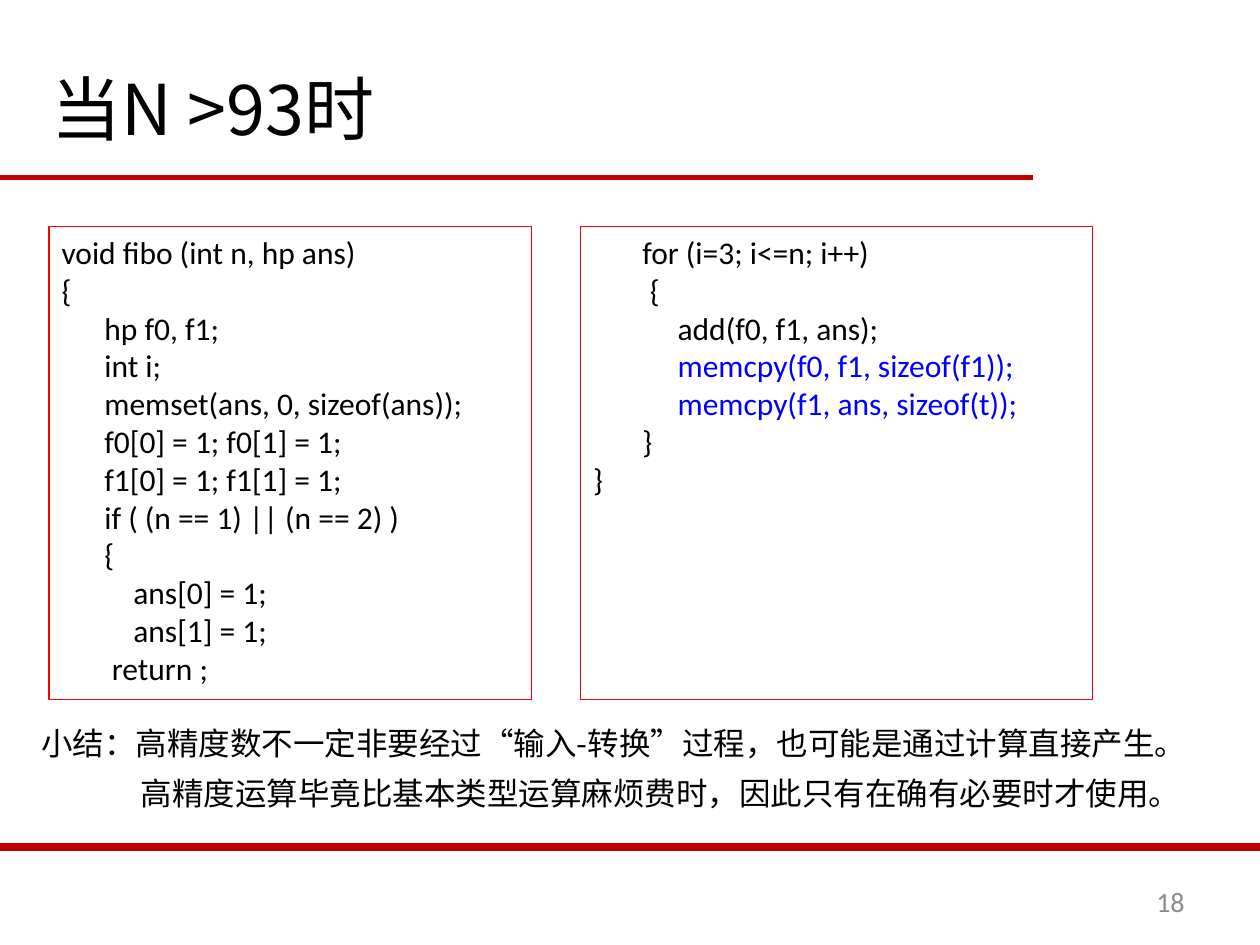
from lxml import etree
from pptx import Presentation
from pptx.dml.color import RGBColor
from pptx.enum.shapes import MSO_CONNECTOR, MSO_SHAPE
from pptx.enum.text import MSO_ANCHOR, PP_ALIGN
from pptx.oxml.ns import qn
from pptx.util import Inches, Pt

STRAIGHT = MSO_CONNECTOR.STRAIGHT
RECTANGLE = MSO_SHAPE.RECTANGLE
TOP, MIDDLE = MSO_ANCHOR.TOP, MSO_ANCHOR.MIDDLE
LEFT, RIGHT = PP_ALIGN.LEFT, PP_ALIGN.RIGHT

WIDTH, HEIGHT = 10, 7.5
CODE_FONT, TEXT_FONT = "Calibri", "Noto Sans CJK SC"
BLACK, BLUE, RED, DARK_RED, GRAY = "000000", "0000FF", "FF0000", "C00000", "8C8C8C"
CODE_TOP = 0.24 * HEIGHT
CODE_HEIGHT = 0.5 * HEIGHT

# Code lines: indent in inches, text, colour
LEFT_CODE = [
    (0, "void fibo (int n, hp ans)", BLACK),
    (0, "{", BLACK),
    (0.34, "hp f0, f1;", BLACK),
    (0.34, "int i;", BLACK),
    (0.34, "memset(ans, 0, sizeof(ans));", BLACK),
    (0.34, "f0[0] = 1; f0[1] = 1;", BLACK),
    (0.34, "f1[0] = 1; f1[1] = 1;", BLACK),
    (0.34, "if ( (n == 1) || (n == 2) )", BLACK),
    (0.34, "{", BLACK),
    (0.57, "ans[0] = 1;", BLACK),
    (0.57, "ans[1] = 1;", BLACK),
    (0.4, "return ;", BLACK),
]
RIGHT_CODE = [
    (0.39, "for (i=3; i<=n; i++)", BLACK),
    (0.45, "{", BLACK),
    (0.67, "add(f0, f1, ans);", BLACK),
    (0.67, "memcpy(f0, f1, sizeof(f1));", BLUE),
    (0.67, "memcpy(f1, ans, sizeof(t));", BLUE),
    (0.39, "}", BLACK),
    (0, "}", BLACK),
]


def color(value):
    return RGBColor.from_string(value)


def style(paragraph, size, font, value, align=LEFT):
    paragraph.alignment = align
    paragraph.font.size = Pt(size)
    paragraph.font.name = font
    paragraph.font.color.rgb = color(value)
    # East Asian glyphs take their font from a separate element
    properties = paragraph.font._element
    etree.SubElement(properties, qn("a:ea")).set("typeface", font)


def add_rule(slide, right, y, weight):
    line = slide.shapes.add_connector(
        STRAIGHT, 0, Inches(y), Inches(right), Inches(y))
    line.line.color.rgb = color(DARK_RED)
    line.line.width = Pt(weight)
    etree.SubElement(line._element.spPr, qn("a:effectLst"))


def add_text(slide, box, text, size, font=TEXT_FONT, value=BLACK,
             align=LEFT, anchor=TOP, wrap=True):
    shape = slide.shapes.add_textbox(*map(Inches, box))
    frame = shape.text_frame
    frame.word_wrap = wrap
    frame.vertical_anchor = anchor
    frame.text = text
    style(frame.paragraphs[0], size, font, value, align)


def add_code(slide, left, width, lines):
    box = (left, CODE_TOP, width, CODE_HEIGHT)
    shape = slide.shapes.add_shape(RECTANGLE, *map(Inches, box))
    shape.shadow.inherit = False
    shape.fill.background()
    shape.line.color.rgb = color(RED)
    shape.line.width = Pt(0.75)
    frame = shape.text_frame
    frame.word_wrap = True
    frame.vertical_anchor = TOP
    frame.text = "\n".join(text for _, text, _ in lines)
    for paragraph, (indent, _, value) in zip(frame.paragraphs, lines):
        style(paragraph, 18, CODE_FONT, value)
        properties = paragraph._p.get_or_add_pPr()
        properties.set("marL", "0")
        properties.set("indent", str(Inches(indent)))


def main():
    presentation = Presentation()
    presentation.slide_width = Inches(WIDTH)
    presentation.slide_height = Inches(HEIGHT)
    slide = presentation.slides.add_slide(presentation.slide_layouts[6])

    # Rules under the title and above the footer
    add_rule(slide, 0.82 * WIDTH, 1.41, 3)
    add_rule(slide, WIDTH, 6.72, 4.5)

    # Title
    add_text(slide, (0.31, 0.47, 3.19, 0.77), "当N >93时", 40, wrap=False)

    # Code in two columns
    add_code(slide, 0.39, 3.83, LEFT_CODE)
    add_code(slide, 4.61, 4.06, RIGHT_CODE)

    # Summary
    add_text(slide, (0.23, 5.7, 9.14, 0.4),
             "小结：高精度数不一定非要经过“输入-转换”过程，也可能是通过计算直接产生。", 18)
    add_text(slide, (1.02, 6.09, 8.36, 0.4),
             "高精度运算毕竟比基本类型运算麻烦费时，因此只有在确有必要时才使用。", 18)

    # Page number
    add_text(slide, (7.17, 6.95, 2.33, 0.4), "18", 16, CODE_FONT, GRAY,
             RIGHT, MIDDLE)

    presentation.save("out.pptx")


if __name__ == "__main__":
    main()
